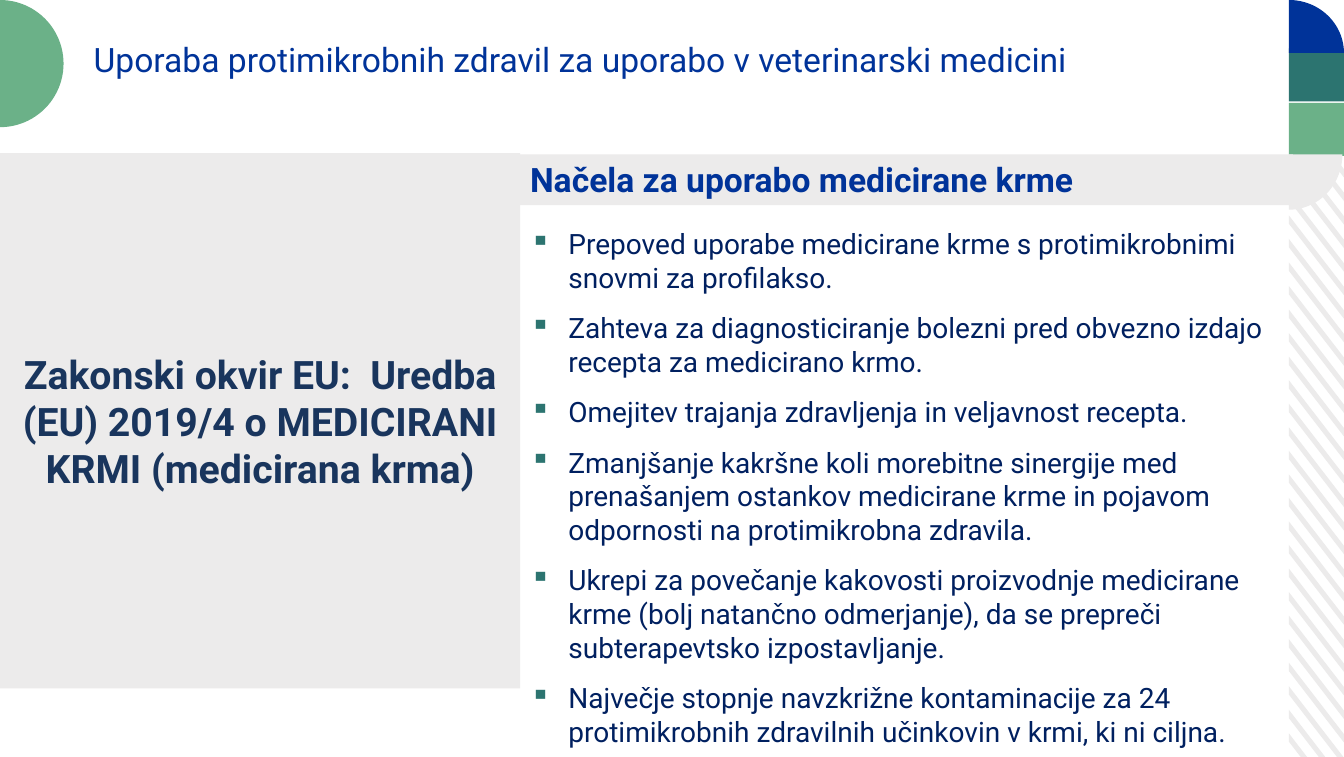
from math import cos, pi, sin
from lxml import etree
from pptx import Presentation
from pptx.dml.color import RGBColor
from pptx.enum.shapes import MSO_SHAPE
from pptx.enum.text import MSO_ANCHOR, PP_ALIGN
from pptx.oxml.ns import qn
from pptx.util import Inches, Pt

RECT = MSO_SHAPE.RECTANGLE
TOP, MID = MSO_ANCHOR.TOP, MSO_ANCHOR.MIDDLE
LEFT, CENTER = PP_ALIGN.LEFT, PP_ALIGN.CENTER
BLUE = RGBColor(0x00, 0x33, 0x99)
NAVY = RGBColor(0x19, 0x35, 0x5D)
INK = RGBColor(0x00, 0x20, 0x60)
TEAL = RGBColor(0x2C, 0x74, 0x70)
GREEN = RGBColor(0x6B, 0xB1, 0x88)
GRAY = RGBColor(0xEC, 0xEB, 0xEB)

deck = Presentation()
deck.slide_width, deck.slide_height = Inches(13.33), Inches(7.51)
W, H = deck.slide_width, deck.slide_height
slide = deck.slides.add_slide(deck.slide_layouts[6])
shapes = slide.shapes

SPLIT = W * 0.387
EDGE = W * 0.959
SIDE = W - EDGE
BAND = H * 0.204
TILE = H * 0.07


def paint(shape, color):
    shape.shadow.inherit = False
    shape.fill.solid()
    shape.fill.fore_color.rgb = color
    shape.line.fill.background()


def write(shape, lines, size, color, bold=False, align=LEFT, anchor=TOP):
    frame = shape.text_frame
    frame.word_wrap = True
    frame.vertical_anchor = anchor
    for i, line in enumerate(lines):
        para = frame.paragraphs[0] if i == 0 else frame.add_paragraph()
        para.text = line
        para.alignment = align
        if len(lines) > 1:
            para.space_before = Pt(6 if i else 0)
            para.space_after = Pt(6)
            prop = para._p.get_or_add_pPr()
            prop.set("marL", str(Inches(0.38)))
            prop.set("indent", str(-Inches(0.38)))
            tint = etree.SubElement(prop, qn("a:buClr"))
            etree.SubElement(tint, qn("a:srgbClr")).set("val", str(TEAL))
            etree.SubElement(prop, qn("a:buChar")).set("char", "▪")
        para.font.name = "Roboto"
        para.font.size = Pt(size)
        para.font.bold = bold
        para.font.color.rgb = color


PITCH = H * 0.0311
THICK = H * 0.011
SLOPE = H * 0.0944 / SIDE
stripes = None
for k in range(-3, 25):
    ends = []
    for y in (H * 0.2224 + k * PITCH, H * 0.2224 + k * PITCH + THICK):
        span = [max(0, (BAND - y) / SLOPE), min(SIDE, (H - y) / SLOPE)]
        ends.append([(round(EDGE + x), round(y + SLOPE * x)) for x in span])
    points = ends[0] + ends[1][::-1]
    if stripes is None:
        stripes = shapes.build_freeform(*points[0], scale=1.0)
    else:
        stripes.move_to(*points[0])
    stripes.add_line_segments(points[1:], close=True)
paint(stripes.convert_to_shape(), GRAY)

for row, color in enumerate((TEAL, GREEN), 1):
    tile = shapes.add_shape(RECT, round(EDGE), round(row * BAND / 3 - (row == 1) * H * 0.004),
                            round(SIDE), round(TILE))
    paint(tile, color)

STEPS = 48
sectors = [
    (EDGE, TILE, SIDE, TILE, -pi / 2, 0, BLUE),
    (EDGE, BAND, SIDE * 0.97, H * 0.073, 0, pi / 2, GRAY),
    (0, H * 0.084, W * 0.0473, H * 0.084, -pi / 2, pi / 2, GREEN),
]
for cx, cy, rx, ry, start, end, color in sectors:
    turns = [start + (end - start) * i / STEPS for i in range(STEPS + 1)]
    arc = [(round(cx + rx * cos(t)), round(cy + ry * sin(t))) for t in turns]
    sector = shapes.build_freeform(round(cx), round(cy), scale=1.0)
    sector.add_line_segments(arc, close=True)
    paint(sector.convert_to_shape(), color)

title = shapes.add_textbox(round(W * 0.0623), round(H * 0.045), round(W * 0.838), round(H * 0.077))
write(title, ["Uporaba protimikrobnih zdravil za uporabo v veterinarski medicini"], 24, BLUE)

head = shapes.add_shape(RECT, round(SPLIT), round(BAND), round(W * 0.575), round(H * 0.067))
paint(head, GRAY)
write(head, ["Načela za uporabo medicirane krme"], 24, BLUE, bold=True)

panel = shapes.add_shape(RECT, 0, round(H * 0.2024), round(SPLIT), round(H * 0.707))
paint(panel, GRAY)
write(panel, ["Zakonski okvir EU:  Uredba (EU) 2019/4 o MEDICIRANI KRMI (medicirana krma)"],
      28, NAVY, bold=True, align=CENTER, anchor=MID)

rules = [
    "Prepoved uporabe medicirane krme s protimikrobnimi snovmi za profilakso.",
    "Zahteva za diagnosticiranje bolezni pred obvezno izdajo recepta za medicirano krmo.",
    "Omejitev trajanja zdravljenja in veljavnost recepta.",
    "Zmanjšanje kakršne koli morebitne sinergije med prenašanjem ostankov medicirane krme "
    "in pojavom odpornosti na protimikrobna zdravila.",
    "Ukrepi za povečanje kakovosti proizvodnje medicirane krme (bolj natančno odmerjanje), "
    "da se prepreči subterapevtsko izpostavljanje.",
    "Največje stopnje navzkrižne kontaminacije za 24 protimikrobnih zdravilnih učinkovin "
    "v krmi, ki ni ciljna.",
]
body = shapes.add_textbox(round(SPLIT), round(H * 0.293), round(W * 0.569), round(H * 0.574))
write(body, rules, 20, INK)

deck.save("out.pptx")
